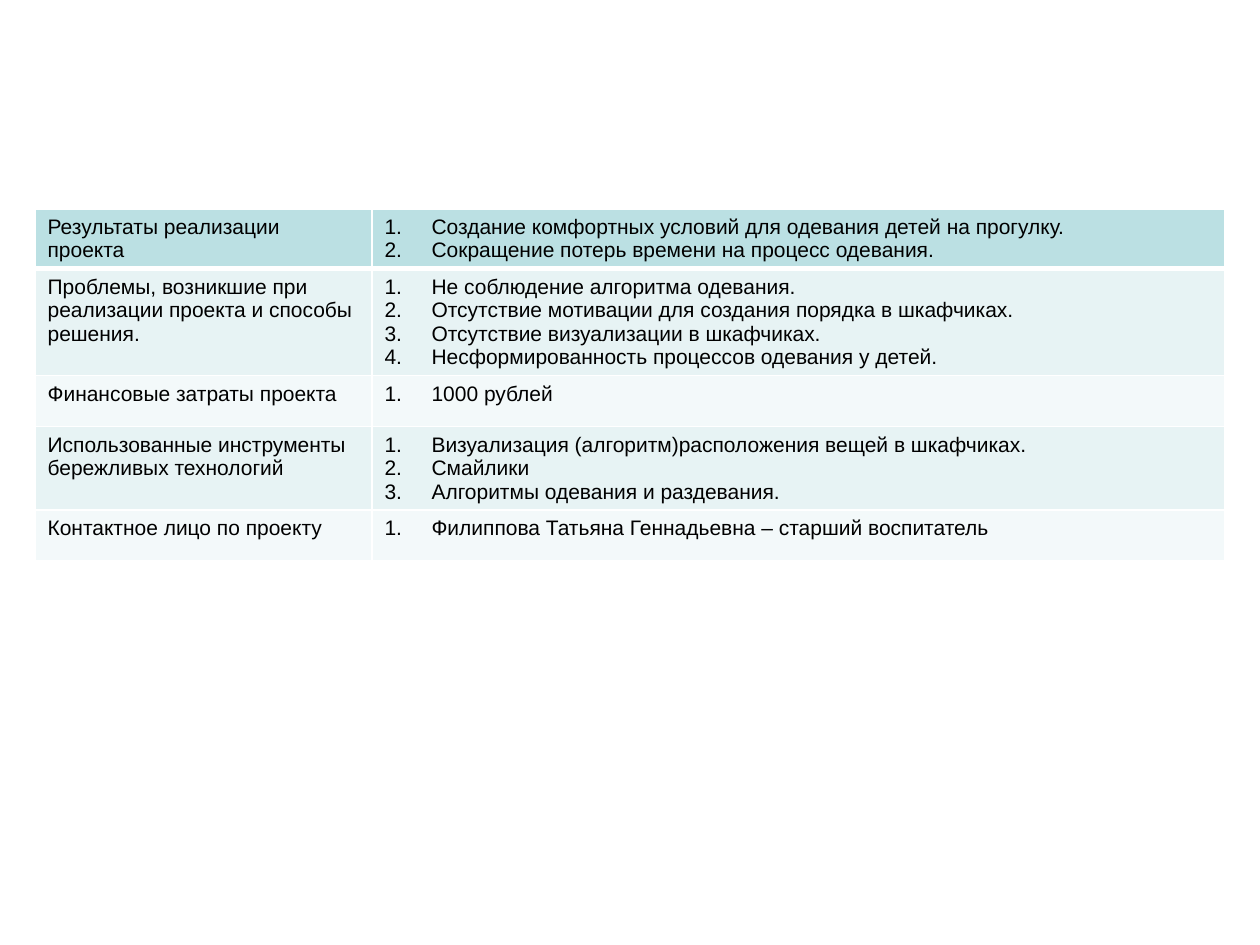
from lxml.etree import SubElement
from pptx import Presentation
from pptx.dml.color import RGBColor
from pptx.enum.text import MSO_ANCHOR as Anchor, PP_ALIGN as Align
from pptx.oxml.ns import qn
from pptx.util import Pt

EMU_PER_PX = 914400 / 126
HEADER, BAND, PLAIN = "BBE0E3", "E7F3F4", "F3F9FA"

# (row height, fill, topic, numbered points)
ROWS = [
    (59, HEADER, "Результаты реализации проекта", [
        "Создание комфортных условий для одевания детей на прогулку.",
        "Сокращение потерь времени на процесс одевания."]),
    (107, BAND, "Проблемы, возникшие при реализации проекта и способы решения.", [
        "Не соблюдение алгоритма одевания.",
        "Отсутствие мотивации для создания порядка в шкафчиках.",
        "Отсутствие визуализации в шкафчиках.",
        "Несформированность процессов одевания у детей."]),
    (51, PLAIN, "Финансовые затраты проекта", ["1000 рублей"]),
    (83, BAND, "Использованные инструменты бережливых технологий", [
        "Визуализация (алгоритм)расположения вещей в шкафчиках.",
        "Смайлики",
        "Алгоритмы одевания и раздевания."]),
    (51, PLAIN, "Контактное лицо по проекту", [
        "Филиппова Татьяна Геннадьевна – старший воспитатель"]),
]


def px(length):
    return round(length * EMU_PER_PX)


def color(hex_code):
    return RGBColor.from_string(hex_code)


class SlideBuilder:
    font_name = "Arial"
    font_size = 12
    text_color = "000000"
    border_color = "FFFFFF"
    number_indent = 47

    def __init__(self, slide):
        self.slide = slide

    def table(self, left, top, column_widths, rows):
        heights = [row[0] for row in rows]
        grid = self.slide.shapes.add_table(
            len(rows), len(column_widths), px(left), px(top),
            px(sum(column_widths)), px(sum(heights))).table
        grid.first_row = grid.horz_banding = False
        for column, width in zip(grid.columns, column_widths):
            column.width = px(width)
        for index, (height, fill, topic, points) in enumerate(rows):
            grid.rows[index].height = px(height)
            borders = {"L": 1, "R": 1, "T": 3 if index == 1 else 1,
                       "B": 3 if index == 0 else 1}
            self.cell(grid.cell(index, 0), [topic], fill, borders)
            self.cell(grid.cell(index, 1), points, fill, borders, numbered=True)

    def cell(self, cell, lines, fill, borders, numbered=False):
        self.borders(cell, borders)
        cell.fill.solid()
        cell.fill.fore_color.rgb = color(fill)
        cell.vertical_anchor = Anchor.TOP
        cell.text_frame.text = "\n".join(lines)
        for paragraph in cell.text_frame.paragraphs:
            paragraph.alignment = Align.LEFT
            if numbered:
                self.number(paragraph)
            for run in paragraph.runs:
                run.font.name = self.font_name
                run.font.size = Pt(self.font_size)
                run.font.bold = False
                run.font.color.rgb = color(self.text_color)

    def number(self, paragraph):
        """Turn the paragraph into an automatically numbered item."""
        properties = paragraph._p.get_or_add_pPr()
        properties.set("marL", str(px(self.number_indent)))
        properties.set("indent", str(-px(self.number_indent)))
        SubElement(properties, qn("a:buFont"), typeface=self.font_name)
        SubElement(properties, qn("a:buAutoNum"), type="arabicPeriod")

    def borders(self, cell, widths):
        """Draw the cell sides; widths maps a side letter to points."""
        properties = cell._tc.get_or_add_tcPr()
        for side, width in widths.items():
            line = SubElement(properties, qn(f"a:ln{side}"), w=str(Pt(width)))
            line_fill = SubElement(line, qn("a:solidFill"))
            SubElement(line_fill, qn("a:srgbClr"), val=self.border_color)


def main():
    presentation = Presentation()
    presentation.slide_width, presentation.slide_height = px(1260), px(945)
    blank_layout = presentation.slide_layouts[6]
    builder = SlideBuilder(presentation.slides.add_slide(blank_layout))
    builder.table(35, 209, [337, 853], ROWS)
    presentation.save("out.pptx")


if __name__ == "__main__":
    main()
